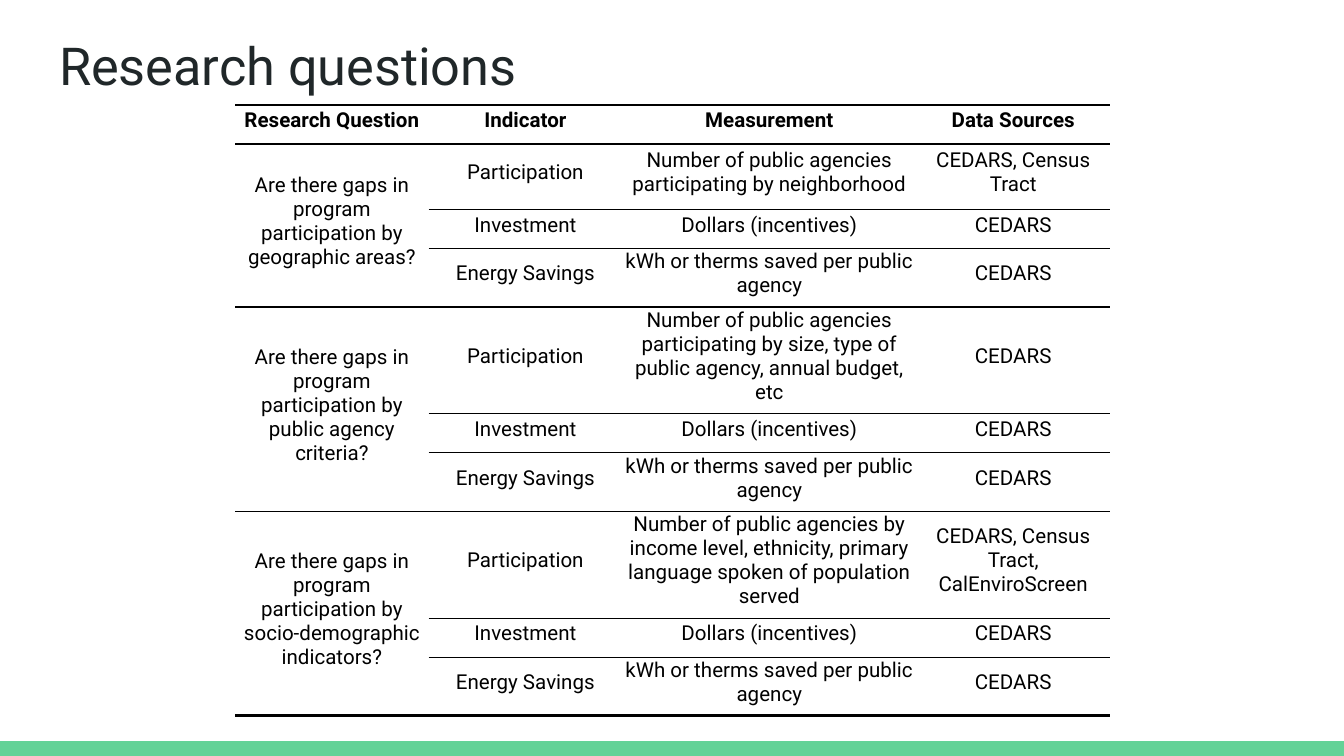
from lxml.etree import SubElement
from pptx import Presentation
from pptx.dml.color import RGBColor
from pptx.enum.shapes import MSO_SHAPE
from pptx.enum.text import MSO_ANCHOR, PP_ALIGN
from pptx.oxml.ns import qn
from pptx.util import Inches, Pt

COLORS = {"bar": "63D297", "title": "202729", "text": "000000"}
FONT = "Roboto"
SLIDE_WIDTH = Inches(10)
SLIDE_HEIGHT = SLIDE_WIDTH * 9 // 16
BAR_HEIGHT = Inches(0.11)
TITLE = "Research questions"
HEADERS = ["Research Question", "Indicator", "Measurement", "Data Sources"]
INVESTMENT = ("Investment", "Dollars (incentives)", "CEDARS")
SAVINGS = ("Energy Savings", "kWh or therms saved per public agency", "CEDARS")
QUESTIONS = [
    ("Are there gaps in program participation by geographic areas?",
     "Number of public agencies participating by neighborhood",
     "CEDARS, Census Tract"),
    ("Are there gaps in program participation by public agency criteria?",
     "Number of public agencies participating by size, type of public agency, annual budget, etc",
     "CEDARS"),
    ("Are there gaps in program participation by socio-demographic indicators?",
     "Number of public agencies by income level, ethnicity, primary language spoken of population served",
     "CEDARS, Census Tract, CalEnviroScreen"),
]
COLUMN_WIDTHS = [1.44, 1.44, 2.19, 1.44]
ROW_HEIGHTS = [0.29, 0.49, 0.29, 0.29, 0.69, 0.29, 0.29, 0.69, 0.29, 0.31]
GROUP_SIZE = 3
THICK, MEDIUM, THIN = 1.5, 1, 0.5
CELL_FORMAT = {
    "margin_left": Inches(0.01), "margin_right": Inches(0.01),
    "margin_top": Inches(0.01), "margin_bottom": Inches(0.07),
    "vertical_anchor": MSO_ANCHOR.MIDDLE,
}
TITLE_PLACE = {"left": Inches(0.34), "top": Inches(0.15), "width": Inches(9.32), "height": Inches(0.63)}
TITLE_FRAME = {
    "margin_left": Inches(0.1), "margin_right": Inches(0.1),
    "margin_top": Inches(0.1), "margin_bottom": Inches(0.1),
    "vertical_anchor": MSO_ANCHOR.TOP, "word_wrap": True,
}


def apply_format(target, values):
    for name, value in values.items():
        setattr(target, name, value)


def write(paragraph, text, size, color, align, bold=False):
    paragraph.alignment = align
    run = paragraph.add_run()
    run.text = text
    apply_format(run.font, {"name": FONT, "size": Pt(size), "bold": bold})
    run.font.color.rgb = RGBColor.from_string(COLORS[color])


def edge_weight(edge):
    if edge in (0, 1, len(ROW_HEIGHTS)):
        return THICK
    return MEDIUM if (edge - 1) % GROUP_SIZE == 0 else THIN


def set_borders(cell, top, bottom):
    properties = cell._tc.get_or_add_tcPr()
    for position, (side, weight) in enumerate([("L", 0), ("R", 0), ("T", top), ("B", bottom)]):
        line = SubElement(properties, qn(f"a:ln{side}"), w=str(Pt(weight)))
        if weight:
            fill = SubElement(line, qn("a:solidFill"))
            SubElement(fill, qn("a:srgbClr"), val=COLORS["text"])
        else:
            SubElement(line, qn("a:noFill"))
        properties.insert(position, line)


def cell_edges(row, column):
    top, bottom = edge_weight(row), edge_weight(row + 1)
    if column or not row:
        return top, bottom
    place = (row - 1) % GROUP_SIZE
    if place == 0:
        return top, edge_weight(row + GROUP_SIZE)
    return 0, bottom if place == GROUP_SIZE - 1 else 0


def build_table(slide):
    rows = [HEADERS]
    for question, measurement, sources in QUESTIONS:
        rows.append((question, "Participation", measurement, sources))
        rows += [("", *INVESTMENT), ("", *SAVINGS)]

    table = slide.shapes.add_table(
        len(rows), len(HEADERS), Inches(1.75), Inches(0.78),
        Inches(sum(COLUMN_WIDTHS)), Inches(sum(ROW_HEIGHTS))).table
    apply_format(table, {"first_row": False, "horz_banding": False})
    for column, width in zip(table.columns, COLUMN_WIDTHS):
        column.width = Inches(width)
    for row, height in zip(table.rows, ROW_HEIGHTS):
        row.height = Inches(height)

    for start in range(1, len(rows), GROUP_SIZE):
        table.cell(start, 0).merge(table.cell(start + GROUP_SIZE - 1, 0))
    for row, texts in enumerate(rows):
        for column, text in enumerate(texts):
            cell = table.cell(row, column)
            apply_format(cell, CELL_FORMAT)
            cell.fill.background()
            set_borders(cell, *cell_edges(row, column))
            if text:
                write(cell.text_frame.paragraphs[0], text, 11, "text", PP_ALIGN.CENTER, row == 0)


def main():
    deck = Presentation()
    apply_format(deck, {"slide_width": SLIDE_WIDTH, "slide_height": SLIDE_HEIGHT})
    slide = deck.slides.add_slide(deck.slide_layouts[5])

    bar = slide.shapes.add_shape(
        MSO_SHAPE.RECTANGLE, 0, SLIDE_HEIGHT - BAR_HEIGHT, SLIDE_WIDTH, BAR_HEIGHT)
    bar.shadow.inherit = False
    bar.fill.solid()
    bar.fill.fore_color.rgb = RGBColor.from_string(COLORS["bar"])
    bar.line.fill.background()

    title = slide.shapes.title
    apply_format(title, TITLE_PLACE)
    apply_format(title.text_frame, TITLE_FRAME)
    write(title.text_frame.paragraphs[0], TITLE, 28, "title", PP_ALIGN.LEFT)

    build_table(slide)
    deck.save("out.pptx")


if __name__ == "__main__":
    main()
